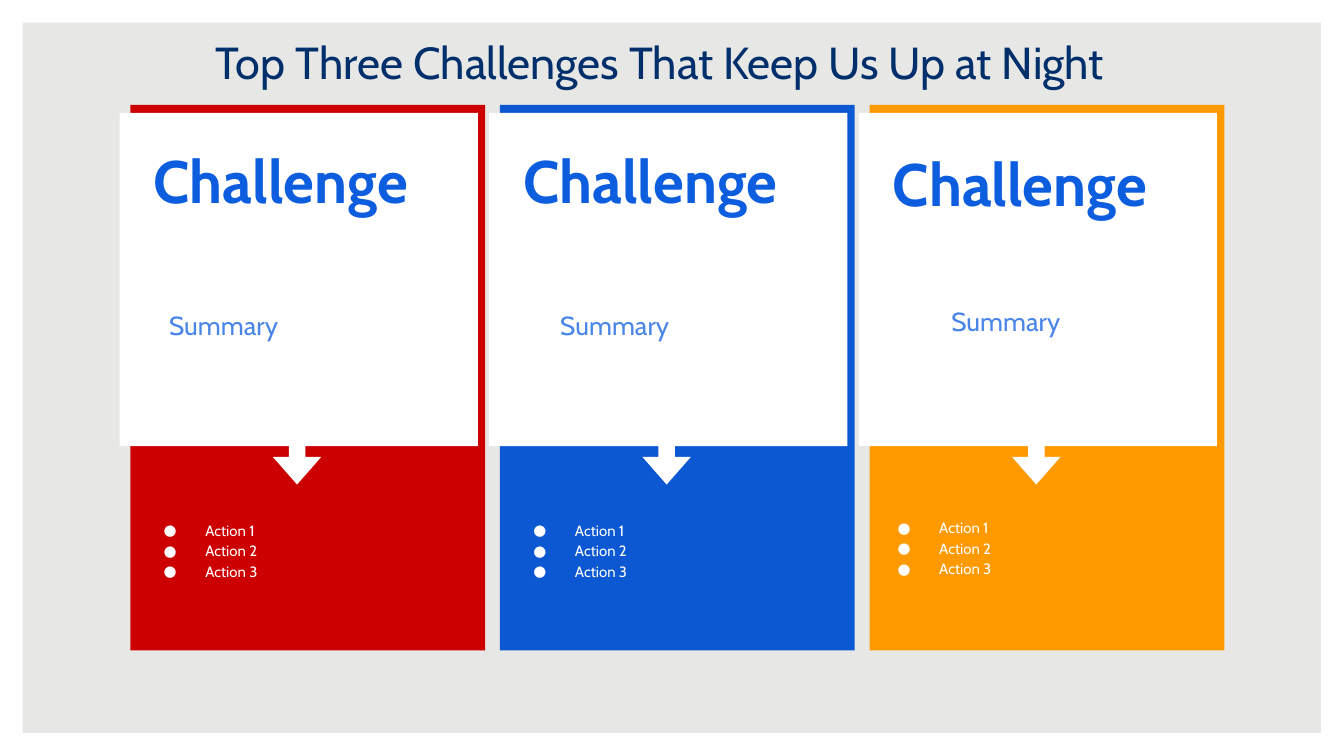
from dataclasses import dataclass

from lxml.etree import SubElement
from pptx import Presentation
from pptx.dml.color import RGBColor
from pptx.enum.shapes import MSO_SHAPE as Shape
from pptx.enum.text import MSO_ANCHOR as Anchor, PP_ALIGN as Align
from pptx.oxml.ns import qn
from pptx.util import Emu, Pt

PX = 4572  # EMU per px, 200 px to the inch
WIDTH, HEIGHT = 2000, 1125
PITCH = 550
FONT = "Cabin"
COLORS = {
    "background": "E7E7E5",
    "white": "FFFFFF",
    "title": "002F6C",
    "heading": "0D5DDF",
    "summary": "4A86E8",
    "red": "CC0000",
    "blue": "0C58D3",
    "orange": "FF9900",
}


@dataclass(frozen=True)
class Box:
    left: int
    top: int
    width: int
    height: int

    def emu(self) -> list[Emu]:
        return [Emu(v * PX) for v in (self.left, self.top, self.width, self.height)]

    def shifted(self, dx: int, dy: int = 0) -> "Box":
        return Box(self.left + dx, self.top + dy, self.width, self.height)


@dataclass(frozen=True)
class Card:
    """A column; its (dx, dy) offsets nudge single texts within it."""
    color: str
    heading: tuple[int, int] = (0, 0)
    summary: tuple[int, int] = (0, 0)
    actions: tuple[int, int] = (0, 0)


CARDS = [
    Card("red"),
    Card("blue", summary=(32, 0)),
    Card("orange", heading=(0, 4), summary=(64, -6), actions=(-8, -4)),
]
TITLE = Box(50, 32, 1864, 126)
PANEL = Box(194, 156, 528, 812)
SHEET = Box(178, 168, 533, 496)
HEADING = Box(209, 194, 472, 134)
SUMMARY = Box(232, 440, 266, 88)
ARROW = Box(403, 646, 78, 72)
ACTIONS = Box(186, 752, 528, 216)


def rgb(name: str) -> RGBColor:
    return RGBColor.from_string(COLORS[name])


def add_block(shapes, kind: Shape, box: Box, color: str, adjust=()):
    sp = shapes.add_shape(kind, *box.emu())
    sp.shadow.inherit = False
    sp.fill.solid()
    sp.fill.fore_color.rgb = rgb(color)
    sp.line.fill.background()
    for i, value in enumerate(adjust):
        sp.adjustments[i] = value
    return sp


def add_bullet(p) -> None:
    pPr = p._p.get_or_add_pPr()
    pPr.set("marL", str(100 * PX))
    pPr.set("indent", str(-62 * PX))
    color = SubElement(pPr, qn("a:buClr"))
    SubElement(color, qn("a:srgbClr"), val=COLORS["white"])
    SubElement(pPr, qn("a:buFont"), typeface=FONT)
    SubElement(pPr, qn("a:buChar"), char="●")


def write(sp, *lines: str, size: int, color: str, bold: bool = False,
          align: Align = Align.LEFT, bullets: bool = False,
          spacing: float = 1.0) -> None:
    tf = sp.text_frame
    tf.word_wrap = True
    tf.vertical_anchor = Anchor.TOP
    tf.margin_left = tf.margin_right = tf.margin_top = tf.margin_bottom = Emu(20 * PX)
    for i, line in enumerate(lines):
        p = tf.add_paragraph() if i else tf.paragraphs[0]
        p.alignment = align
        p.line_spacing = spacing
        p.space_before = Pt(0)
        if bullets:
            add_bullet(p)
        r = p.add_run()
        r.text = line
        r.font.name = FONT
        r.font.size = Pt(size)
        r.font.bold = bold
        r.font.color.rgb = rgb(color)


def add_card(slide, card: Card, dx: int) -> None:
    shapes = slide.shapes.add_group_shape().shapes

    def textbox(box: Box, nudge: tuple[int, int]):
        return shapes.add_textbox(*box.shifted(dx).shifted(*nudge).emu())

    add_block(shapes, Shape.RECTANGLE, PANEL.shifted(dx), card.color)
    add_block(shapes, Shape.RECTANGLE, SHEET.shifted(dx), "white")
    write(textbox(HEADING, card.heading), "Challenge",
          size=32, color="heading", bold=True)
    arrow = add_block(shapes, Shape.RIGHT_ARROW, ARROW.shifted(dx), "white",
                      (0.342, 0.57))
    arrow.rotation = 90
    write(textbox(ACTIONS, card.actions), "Action 1", "Action 2", "Action 3",
          size=8, color="white", bullets=True, spacing=1.15)
    write(textbox(SUMMARY, card.summary), "Summary", size=14, color="summary")


def main() -> None:
    prs = Presentation()
    prs.slide_width, prs.slide_height = Emu(WIDTH * PX), Emu(HEIGHT * PX)
    slide = prs.slides.add_slide(prs.slide_layouts[5])
    slide.background.fill.solid()
    slide.background.fill.fore_color.rgb = rgb("background")

    add_block(slide.shapes, Shape.FRAME, Box(0, 0, WIDTH, HEIGHT), "white", (0.03,))
    title = slide.shapes.title
    title.left, title.top, title.width, title.height = TITLE.emu()
    write(title, "Top Three Challenges That Keep Us Up at Night", size=24,
          color="title", align=Align.CENTER)
    for i, card in enumerate(CARDS):
        add_card(slide, card, i * PITCH)
    prs.save("out.pptx")


if __name__ == "__main__":
    main()
